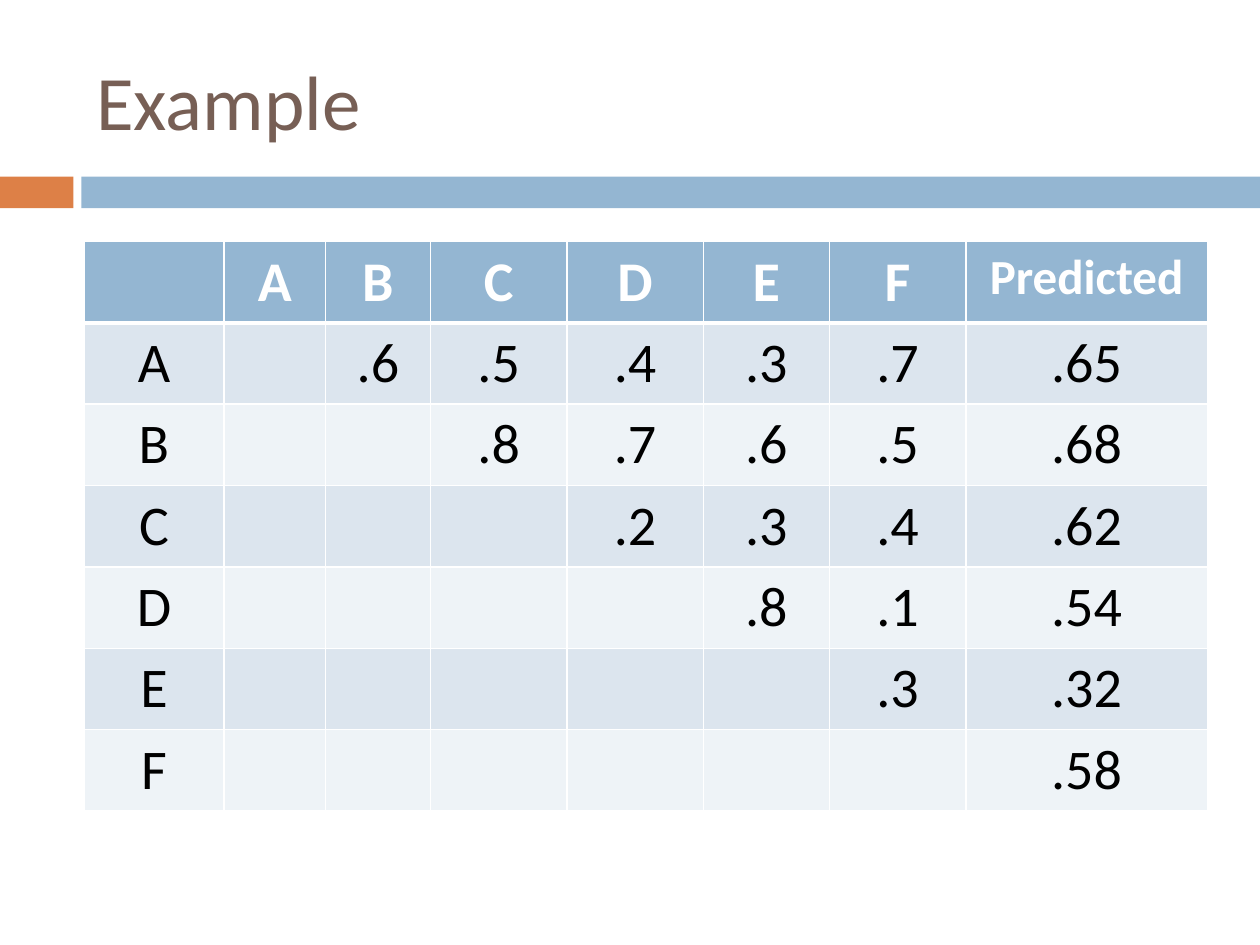
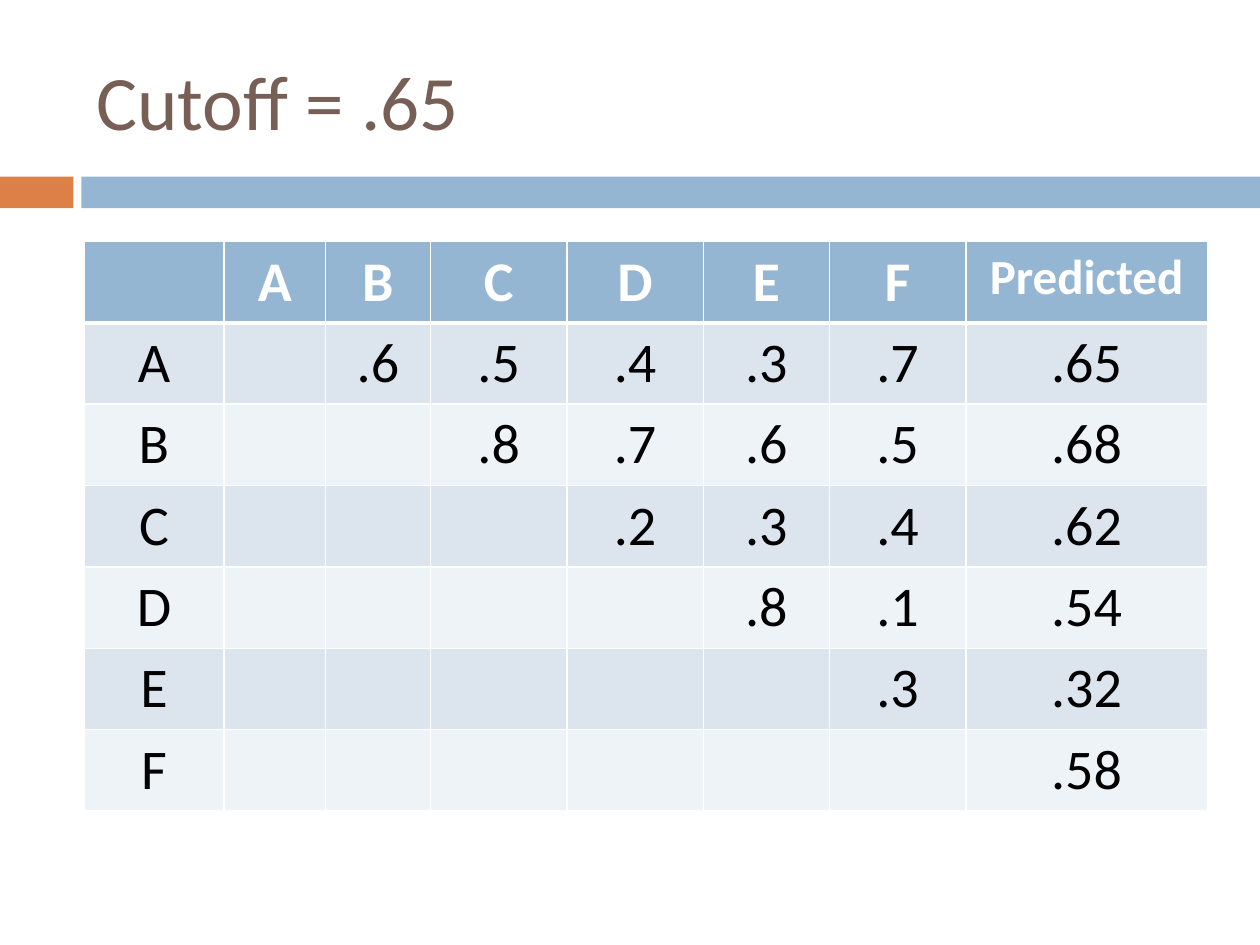
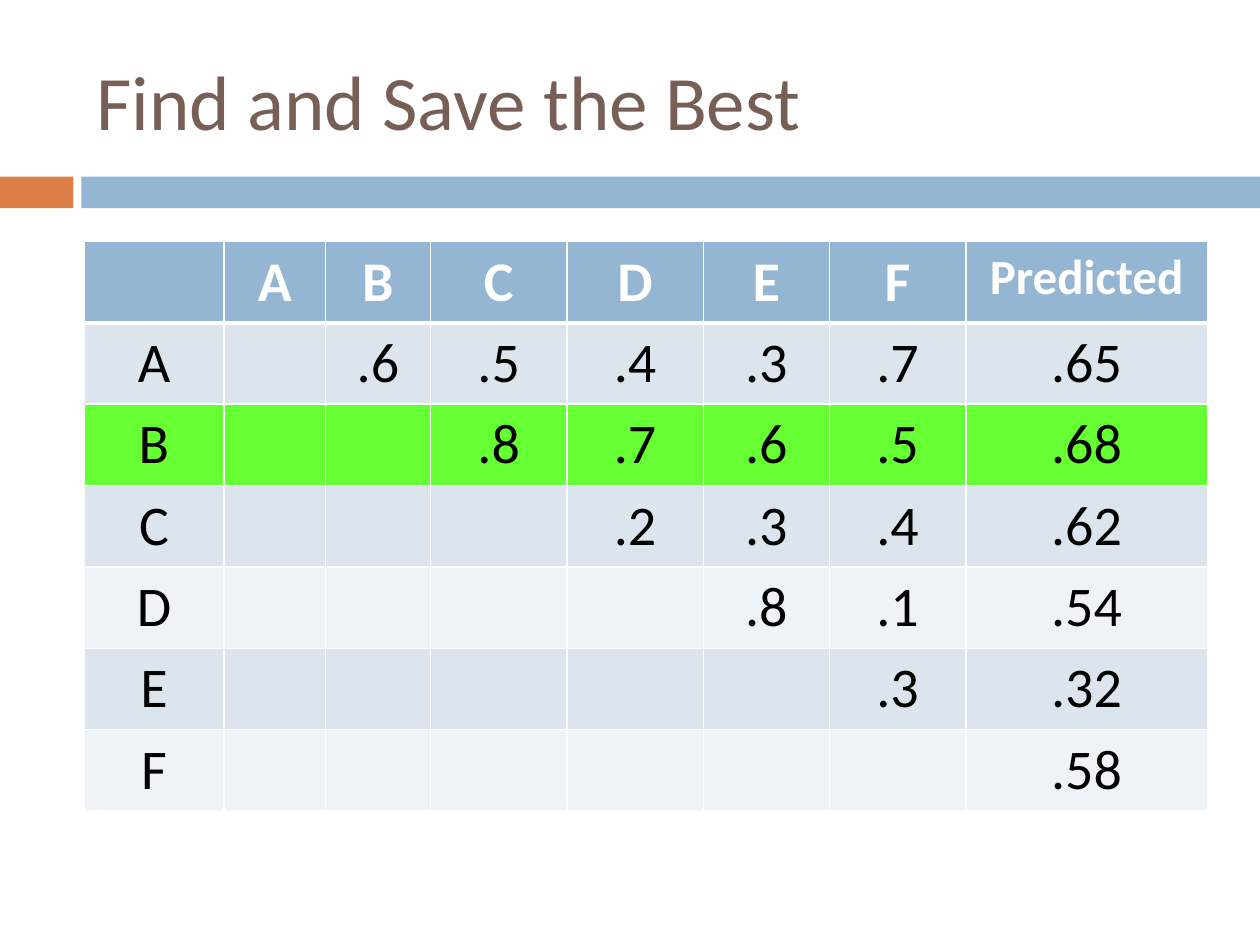
from lxml import etree
from pptx import Presentation
from pptx.dml.color import RGBColor
from pptx.enum.shapes import MSO_SHAPE
from pptx.enum.text import MSO_ANCHOR, PP_ALIGN
from pptx.oxml.ns import qn
from pptx.util import Pt

RECT = MSO_SHAPE.RECTANGLE
MIDDLE = MSO_ANCHOR.MIDDLE
LEFT, CENTER = PP_ALIGN.LEFT, PP_ALIGN.CENTER

FONT = "Calibri"
BROWN, ORANGE, BLUE = "775F55", "DD8047", "94B6D2"
BAND_DARK, BAND_LIGHT, GREEN = "DCE5EE", "EEF3F7", "66FF33"
WHITE, BLACK = "FFFFFF", "000000"

TITLE_BOX = (48, 18, 642, 78)
TABLE_LEFT, TABLE_TOP = 48, 138
COLUMN_WIDTHS = [80, 58, 60, 78, 78, 72, 78, 138]
ROW_HEIGHT = 46.5

# Upper triangle of pair scores, followed by the predicted value
NAMES = "ABCDEF"
SCORES = [
    [".6", ".5", ".4", ".3", ".7"],
    [".8", ".7", ".6", ".5"],
    [".2", ".3", ".4"],
    [".8", ".1"],
    [".3"],
    [],
]
PREDICTED = [".65", ".68", ".62", ".54", ".32", ".58"]

# Slide title and the row to highlight
SLIDES = [
    ("Example", None),
    ("Cutoff = .65", None),
    ("Find and Save the Best", "B"),
]


def rgb(value):
    return RGBColor.from_string(value)


def score_rows():
    rows = [["", *NAMES, "Predicted"]]
    for i, (name, scores) in enumerate(zip(NAMES, SCORES)):
        rows.append([name] + [""] * (i + 1) + scores + [PREDICTED[i]])
    return rows


class Deck:
    def __init__(self):
        self.prs = Presentation()
        self.prs.slide_width, self.prs.slide_height = Pt(720), Pt(540)
        self.s = None

    def slide(self, title):
        self.s = self.prs.slides.add_slide(self.prs.slide_layouts[6])
        self.bar(0, 42, ORANGE)
        self.bar(46.5, 673.5, BLUE)
        self.title(title)

    def bar(self, left, width, color):
        sp = self.s.shapes.add_shape(RECT, Pt(left), Pt(101), Pt(width), Pt(18))
        sp.shadow.inherit = False
        sp.fill.solid()
        sp.fill.fore_color.rgb = rgb(color)
        sp.line.fill.background()

    def text(self, tf, text, align, color, **format_values):
        p = tf.paragraphs[0]
        p.alignment = align
        r = p.add_run()
        r.text = text
        r.font.color.rgb = rgb(color)
        for name, value in {"name": FONT, **format_values}.items():
            setattr(r.font, name, value)

    def title(self, text):
        sp = self.s.shapes.add_textbox(*map(Pt, TITLE_BOX))
        tf = sp.text_frame
        tf.word_wrap = True
        tf.vertical_anchor = MIDDLE
        self.text(tf, text, LEFT, BROWN, size=Pt(44))

    def borders(self, cell, **widths):
        tc_pr = cell._tc.get_or_add_tcPr()
        for side in "LRTB":
            ln = etree.SubElement(tc_pr, qn(f"a:ln{side}"), w=str(Pt(widths.get(side, 1))))
            fill = etree.SubElement(ln, qn("a:solidFill"))
            etree.SubElement(fill, qn("a:srgbClr"), val=WHITE)

    def table(self, rows, highlight):
        frame = self.s.shapes.add_table(
            len(rows), len(COLUMN_WIDTHS), Pt(TABLE_LEFT), Pt(TABLE_TOP),
            Pt(sum(COLUMN_WIDTHS)), Pt(ROW_HEIGHT * len(rows)))
        table = frame.table
        for column, width in zip(table.columns, COLUMN_WIDTHS):
            column.width = Pt(width)
        for i, row in enumerate(rows):
            table.rows[i].height = Pt(ROW_HEIGHT)
            header = i == 0
            if header:
                fill = BLUE
            elif row[0] == highlight:
                fill = GREEN
            else:
                fill = BAND_DARK if i % 2 else BAND_LIGHT
            for j, text in enumerate(row):
                cell = table.cell(i, j)
                # A thick rule separates the header from the body
                self.borders(cell, B=3 if header else 1, T=3 if i == 1 else 1)
                cell.fill.solid()
                cell.fill.fore_color.rgb = rgb(fill)
                if text:
                    size = 28 if text == "Predicted" else 32
                    self.text(cell.text_frame, text, CENTER,
                              WHITE if header else BLACK, size=Pt(size), bold=header)


def main():
    deck = Deck()
    for title, highlight in SLIDES:
        deck.slide(title)
        deck.table(score_rows(), highlight)
    deck.prs.save("out.pptx")


if __name__ == "__main__":
    main()
